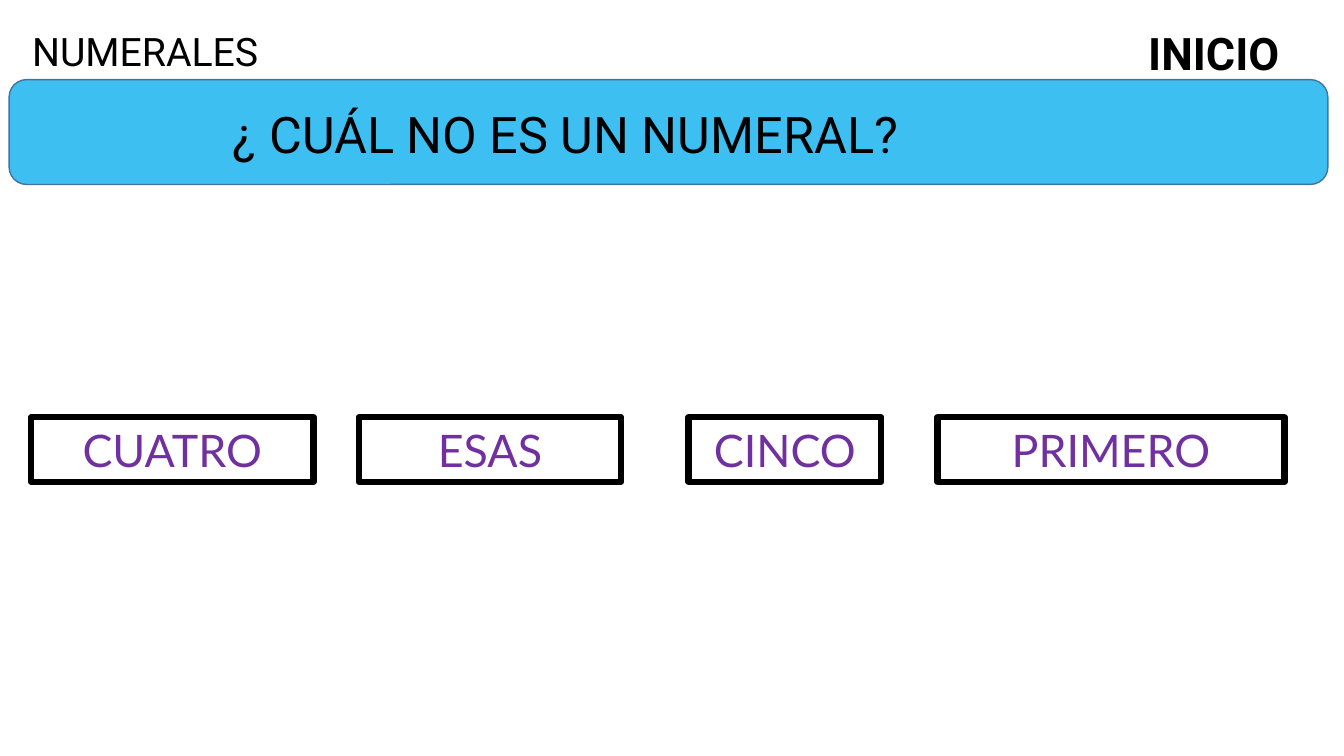
"""Build the quiz slide about numerals."""
from dataclasses import dataclass

from pptx import Presentation
from pptx import util as u
from pptx.dml.color import RGBColor
from pptx.enum import shapes, text

CELL = u.Inches(0.1)
BLACK = "000000"
PURPLE = "7030A0"
BANNER_BLUE = "3EBFF2"
BANNER_EDGE = "43739E"


@dataclass(frozen=True)
class Area:
    """A rectangle in columns and rows of the grid."""
    column: float
    row: float
    columns: float
    rows: float

    def lengths(self) -> list[int]:
        """Return left, top, width and height as lengths."""
        return [round(n * CELL) for n in (self.column, self.row, self.columns, self.rows)]


@dataclass(frozen=True)
class Style:
    """The look of a line of text."""
    font: str
    size: int
    color: str
    alignment: text.PP_ALIGN = text.PP_ALIGN.LEFT
    bold: bool = False


@dataclass(frozen=True)
class Answer:
    """One answer box in the row of choices."""
    word: str
    column: float
    columns: float


ANSWER_ROW, ANSWER_ROWS = 41.4, 6.4
ANSWERS = (
    Answer("CUATRO", 3.1, 28),
    Answer("ESAS", 35.6, 26),
    Answer("CINCO", 68.3, 19.1),
    Answer("PRIMERO", 93, 34.4),
)
TOPIC_STYLE = Style("Roboto", 28, BLACK)
HOME_STYLE = Style("Roboto", 32, BLACK, bold=True)
QUESTION_STYLE = Style("Roboto", 36, BLACK, text.PP_ALIGN.CENTER)
ANSWER_STYLE = Style("Lato", 32, PURPLE, text.PP_ALIGN.CENTER)


def color_of(value: str) -> RGBColor:
    """Turn a hex string into a colour."""
    return RGBColor.from_string(value)


def write(shape, words: str, style: Style, anchor=text.MSO_ANCHOR.TOP) -> None:
    """Put one formatted line of text into a shape."""
    frame = shape.text_frame
    frame.text = words
    frame.word_wrap = True
    frame.auto_size = text.MSO_AUTO_SIZE.NONE
    frame.vertical_anchor = anchor
    paragraph = frame.paragraphs[0]
    paragraph.alignment = style.alignment
    font = paragraph.runs[0].font
    font.name = style.font
    font.size = u.Pt(style.size)
    font.bold = style.bold
    font.color.rgb = color_of(style.color)


def add_label(slide, area: Area, words: str, style: Style) -> None:
    """Add a plain text label."""
    write(slide.shapes.add_textbox(*area.lengths()), words, style)


def add_banner(slide, area: Area) -> None:
    """Add the rounded blue banner."""
    banner = slide.shapes.add_shape(shapes.MSO_SHAPE.ROUNDED_RECTANGLE, *area.lengths())
    banner.shadow.inherit = False
    banner.fill.solid()
    banner.fill.fore_color.rgb = color_of(BANNER_BLUE)
    banner.line.color.rgb = color_of(BANNER_EDGE)
    banner.line.width = u.Pt(1)


def place_question(slide, area: Area, words: str) -> None:
    """Move the title in front of the banner and write the question."""
    title = slide.shapes.title
    title.left, title.top, title.width, title.height = area.lengths()
    write(title, words, QUESTION_STYLE)
    slide.shapes.element.append(title.element)


def add_answer(slide, answer: Answer) -> None:
    """Add a framed answer box."""
    area = Area(answer.column, ANSWER_ROW, answer.columns, ANSWER_ROWS)
    box = slide.shapes.add_shape(shapes.MSO_SHAPE.RECTANGLE, *area.lengths())
    box.shadow.inherit = False
    box.fill.background()
    box.line.color.rgb = color_of(BLACK)
    box.line.width = u.Pt(4.5)
    write(box, answer.word, ANSWER_STYLE, text.MSO_ANCHOR.MIDDLE)


def main() -> None:
    """Build and save the slide."""
    presentation = Presentation()
    presentation.slide_width = u.Inches(13.33)
    presentation.slide_height = u.Inches(7.5)
    slide = presentation.slides.add_slide(presentation.slide_layouts[5])
    add_label(slide, Area(2.2, 2.2, 38.1, 5.7), "NUMERALES", TOPIC_STYLE)
    add_banner(slide, Area(0.9, 7.9, 130.8, 10.4))
    place_question(slide, Area(5.4, 9.7, 101.4, 7.1), "¿ CUÁL NO ES UN NUMERAL?")
    for answer in ANSWERS:
        add_answer(slide, answer)
    add_label(slide, Area(112.9, 2.1, 20.4, 6.4), "INICIO", HOME_STYLE)
    presentation.save("out.pptx")


if __name__ == "__main__":
    main()
